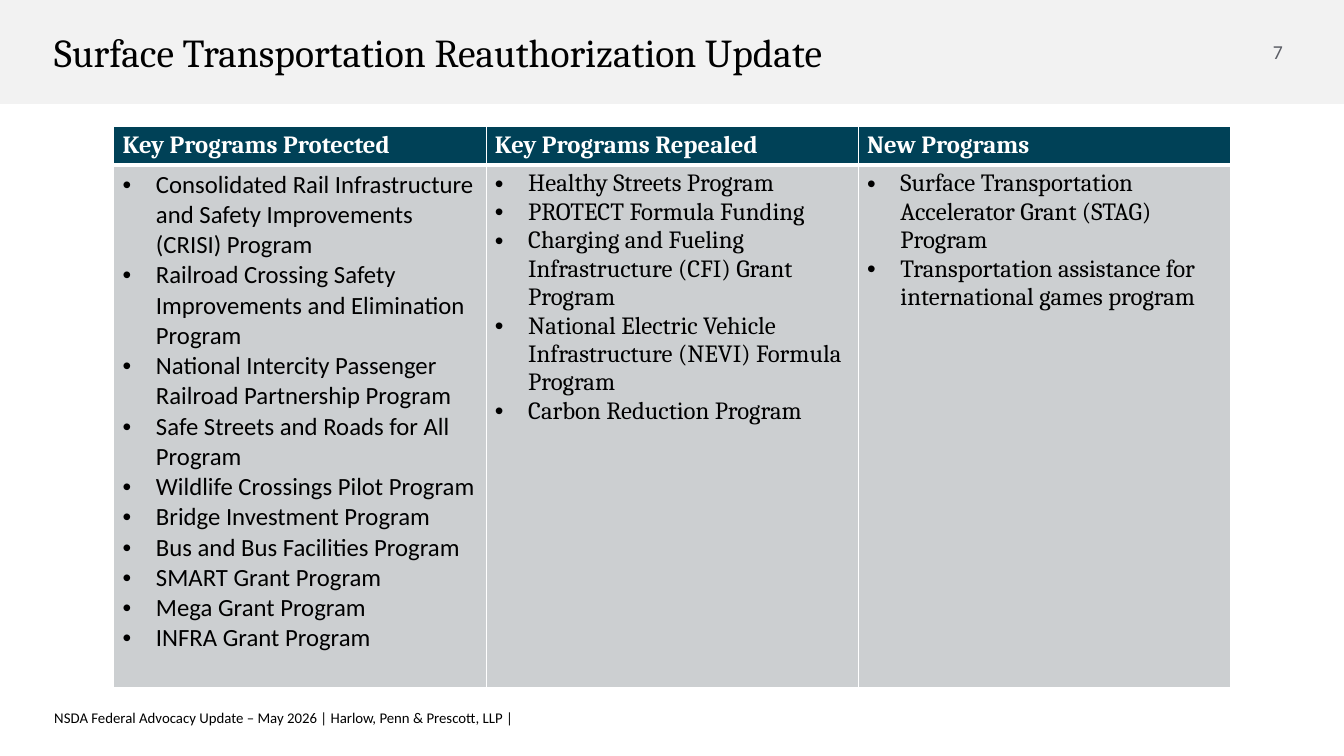
import pptx
import pptx.dml.color
import pptx.enum.shapes
import pptx.enum.text
import pptx.oxml
import pptx.oxml.ns
import pptx.util

Cm = pptx.util.Cm
Pt = pptx.util.Pt
RGBColor = pptx.dml.color.RGBColor

TITLE = "Surface Transportation Reauthorization Update"
PAGE = "7"
FOOTER = "NSDA Federal Advocacy Update – May 2026 | Harlow, Penn & Prescott, LLP |"
PROGRAMS = [
    ("Key Programs Protected", "Calibri", [
        "Consolidated Rail Infrastructure and Safety Improvements (CRISI) Program",
        "Railroad Crossing Safety Improvements and Elimination Program",
        "National Intercity Passenger Railroad Partnership Program",
        "Safe Streets and Roads for All Program",
        "Wildlife Crossings Pilot Program",
        "Bridge Investment Program",
        "Bus and Bus Facilities Program",
        "SMART Grant Program",
        "Mega Grant Program",
        "INFRA Grant Program",
    ]),
    ("Key Programs Repealed", "Cambria", [
        "Healthy Streets Program",
        "PROTECT Formula Funding",
        "Charging and Fueling Infrastructure (CFI) Grant Program",
        "National Electric Vehicle Infrastructure (NEVI) Formula Program",
        "Carbon Reduction Program",
    ]),
    ("New Programs", "Cambria", [
        "Surface Transportation Accelerator Grant (STAG) Program",
        "Transportation assistance for international games program",
    ]),
]

BLACK = RGBColor(0x00, 0x00, 0x00)
WHITE = RGBColor(0xFF, 0xFF, 0xFF)
BAND_GREY = RGBColor(0xF2, 0xF2, 0xF2)
PAGE_GREY = RGBColor(0x5C, 0x5E, 0x66)
TEAL = RGBColor(0x00, 0x41, 0x57)
CELL_GREY = RGBColor(0xCC, 0xCF, 0xD1)

SLIDE_WIDTH, SLIDE_HEIGHT = Cm(38.38), Cm(21.59)
COLUMN_WIDTH = Cm(10.63)
HEADING_HEIGHT, LIST_HEIGHT = Cm(1.05), Cm(14.93)
BULLET_INDENT = Cm(0.95)


def add_run(paragraph, text, font, size, color, bold=False):
    run = paragraph.add_run()
    run.text = text
    run.font.name = font
    run.font.size = Pt(size)
    run.font.color.rgb = color
    run.font.bold = bold


def add_label(slide, box, margins, text, font, size, color):
    frame = slide.shapes.add_textbox(*box).text_frame
    frame.word_wrap = True
    frame.vertical_anchor = pptx.enum.text.MSO_ANCHOR.MIDDLE
    frame.margin_left, frame.margin_top, frame.margin_right, frame.margin_bottom = margins
    paragraph = frame.paragraphs[0]
    add_run(paragraph, text, font, size, color)
    return paragraph


def add_bullet(paragraph):
    properties = paragraph._p.get_or_add_pPr()
    properties.set("marL", str(BULLET_INDENT))
    properties.set("indent", str(-BULLET_INDENT))
    for tag, name, value in (("buFont", "typeface", "Arial"), ("buChar", "char", "•")):
        properties.append(pptx.oxml.parse_xml(
            f'<a:{tag} {pptx.oxml.ns.nsdecls("a")} {name}="{value}"/>'))


def style_cell(cell, fill, top, bottom):
    properties = cell._tc.get_or_add_tcPr()
    for side, width in (("L", 1), ("R", 1), ("T", top), ("B", bottom)):
        properties.append(pptx.oxml.parse_xml(
            f'<a:ln{side} {pptx.oxml.ns.nsdecls("a")} w="{Pt(width)}">'
            f'<a:solidFill><a:srgbClr val="{WHITE}"/></a:solidFill></a:ln{side}>'))
    cell.fill.solid()
    cell.fill.fore_color.rgb = fill


def add_programs(slide):
    count = len(PROGRAMS)
    table = slide.shapes.add_table(
        2, count, Cm(3.25), Cm(3.61),
        COLUMN_WIDTH * count, HEADING_HEIGHT + LIST_HEIGHT).table
    table.horz_banding = False
    table.rows[0].height = HEADING_HEIGHT
    table.rows[1].height = LIST_HEIGHT
    for index, (heading, font, programs) in enumerate(PROGRAMS):
        table.columns[index].width = COLUMN_WIDTH
        heading_cell, list_cell = table.cell(0, index), table.cell(1, index)
        style_cell(heading_cell, TEAL, 1, 3)
        style_cell(list_cell, CELL_GREY, 3, 1)
        add_run(heading_cell.text_frame.paragraphs[0], heading, "Cambria", 20, WHITE, True)
        frame = list_cell.text_frame
        for position, program in enumerate(programs):
            paragraph = frame.add_paragraph() if position else frame.paragraphs[0]
            add_bullet(paragraph)
            add_run(paragraph, program, font, 20, BLACK)


def main():
    deck = pptx.Presentation()
    deck.slide_width, deck.slide_height = SLIDE_WIDTH, SLIDE_HEIGHT
    slide = deck.slides.add_slide(deck.slide_layouts[6])

    band = slide.shapes.add_shape(
        pptx.enum.shapes.MSO_SHAPE.RECTANGLE, 0, 0, SLIDE_WIDTH, Cm(2.97))
    band.shadow.inherit = False
    band.fill.solid()
    band.fill.fore_color.rgb = BAND_GREY
    band.line.fill.background()

    page = add_label(slide, (Cm(35.86), Cm(0.66), Cm(1.27), Cm(1.65)),
                     (0, 0, 0, 0), PAGE, "Calibri", 16, PAGE_GREY)
    page.alignment = pptx.enum.text.PP_ALIGN.CENTER
    add_label(slide, (Cm(1.27), Cm(0.66), Cm(34.34), Cm(1.65)),
              (Cm(0.28), Cm(0.15), Cm(0.28), Cm(0.15)), TITLE, "Cambria", 32, BLACK)
    add_programs(slide)
    footer = add_label(slide, (Cm(1.27), Cm(20.22), Cm(32.11), Cm(0.64)),
                       (Cm(0.28), 0, 0, 0), FOOTER, "Calibri", 12, BLACK)
    footer.line_spacing = 0.8

    deck.save("out.pptx")


if __name__ == "__main__":
    main()
